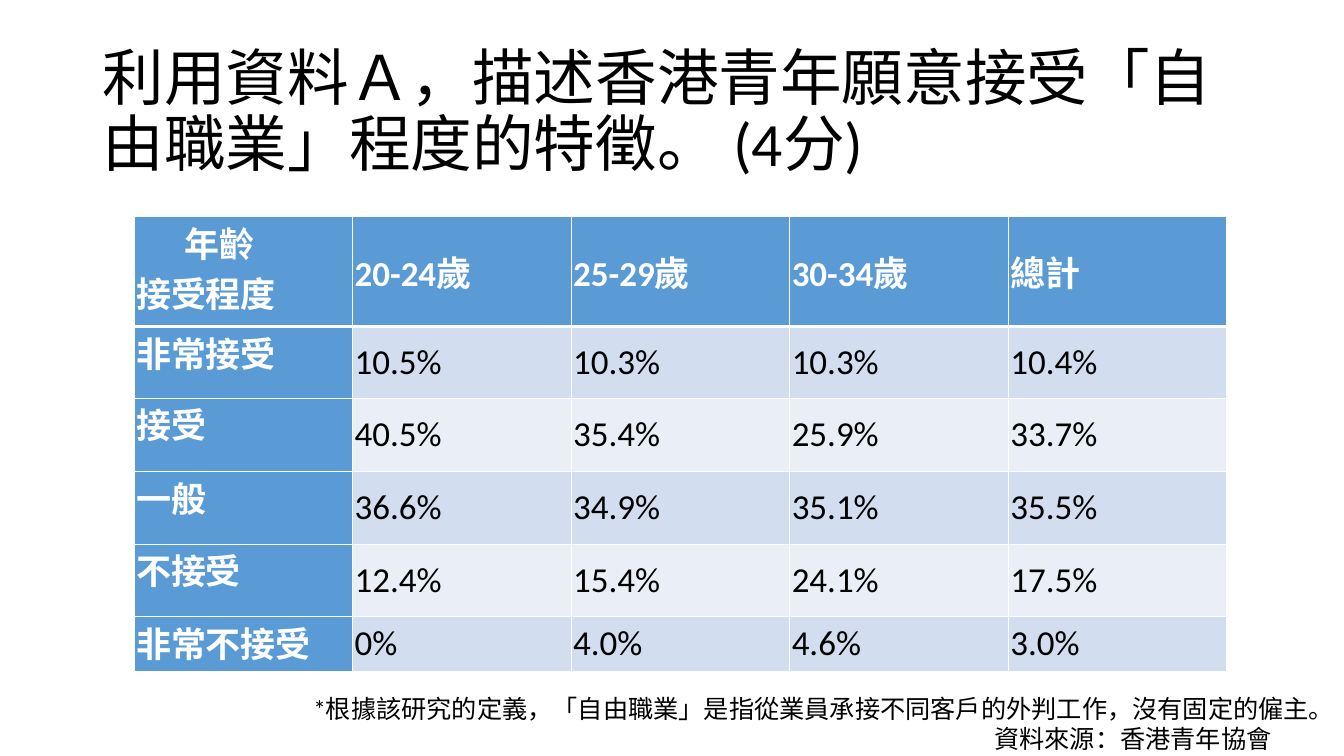
import pptx
import pptx.dml.color
import pptx.enum.text
import pptx.oxml
import pptx.oxml.ns
import pptx.util

Inches = pptx.util.Inches
Pt = pptx.util.Pt
ANCHOR = pptx.enum.text.MSO_ANCHOR
ALIGN = pptx.enum.text.PP_ALIGN

COLORS = {
    "text": "000000",
    "heading": "FFFFFF",
    "border": "FFFFFF",
    "accent": "5B9BD5",
    "odd_row": "D2DEEF",
    "even_row": "EAEFF7",
}

QUESTION = "利用資料Ａ，描述香港青年願意接受「自由職業」程度的特徵。 (4分)"
AGE_LABEL, LEVEL_LABEL = "年齡", "接受程度"
ACCEPTANCE = [
    [f"{AGE_LABEL}\n{LEVEL_LABEL}", "20-24歲", "25-29歲", "30-34歲", "總計"],
    ["非常接受", "10.5%", "10.3%", "10.3%", "10.4%"],
    ["接受", "40.5%", "35.4%", "25.9%", "33.7%"],
    ["一般", "36.6%", "34.9%", "35.1%", "35.5%"],
    ["不接受", "12.4%", "15.4%", "24.1%", "17.5%"],
    ["非常不接受", "0%", "4.0%", "4.6%", "3.0%"],
]
ROW_HEIGHTS = [1.09, 0.71, 0.73, 0.72, 0.72, 0.54]
DEFINITION = "*根據該研究的定義，「自由職業」是指從業員承接不同客戶的外判工作，沒有固定的僱主。"
SOURCE = "資料來源：香港青年協會"


def apply_formats(target, formats):
    for name, value in formats.items():
        setattr(target, name, value)


def style_text(frame, size, color, bold=False, **paragraph_formats):
    for paragraph in frame.paragraphs:
        apply_formats(paragraph, paragraph_formats)
        for run in paragraph.runs:
            apply_formats(run.font, {"name": "Calibri", "size": Pt(size), "bold": bold})
            run.font.color.rgb = pptx.dml.color.RGBColor.from_string(COLORS[color])


def add_words(slide, box, words, size, anchor=ANCHOR.TOP, **paragraph_formats):
    frame = slide.shapes.add_textbox(*map(Inches, box)).text_frame
    apply_formats(frame, {"word_wrap": True, "vertical_anchor": anchor, "text": words})
    style_text(frame, size, "text", **paragraph_formats)


def set_borders(cell, widths):
    properties = cell._tc.get_or_add_tcPr()
    for position, (side, width) in enumerate(widths.items()):
        properties.insert(position, pptx.oxml.parse_xml(
            f'<a:ln{side} {pptx.oxml.ns.nsdecls("a")} w="{Pt(width)}"><a:solidFill>'
            f'<a:srgbClr val="{COLORS["border"]}"/></a:solidFill></a:ln{side}>'))


def add_acceptance_table(slide, box):
    left, top, width, height = map(Inches, box)
    column_count = len(ACCEPTANCE[0])
    table = slide.shapes.add_table(
        len(ACCEPTANCE), column_count, left, top, width, height).table
    for column in table.columns:
        column.width = width // column_count
    for row_index, (levels, row_height) in enumerate(zip(ACCEPTANCE, ROW_HEIGHTS)):
        table.rows[row_index].height = Inches(row_height)
        band = "odd_row" if row_index % 2 else "even_row"
        for column_index, words in enumerate(levels):
            heading = row_index == 0 or column_index == 0
            cell = table.cell(row_index, column_index)
            apply_formats(cell, {
                "text": words,
                "margin_left": Inches(0.02), "margin_right": Inches(0.02),
                "margin_top": 0, "margin_bottom": 0,
                "vertical_anchor": ANCHOR.MIDDLE if column_index else ANCHOR.TOP,
            })
            style_text(cell.text_frame, 25, "heading" if heading else "text", heading)
            cell.fill.solid()
            cell.fill.fore_color.rgb = pptx.dml.color.RGBColor.from_string(
                COLORS["accent" if heading else band])
            set_borders(cell, {"L": 1, "R": 1, "T": 3 if row_index == 1 else 1,
                               "B": 3 if row_index == 0 else 1})
    age_label = table.cell(0, 0).text_frame.paragraphs[0]
    age_label._p.get_or_add_pPr().set("marL", str(Inches(0.48)))


def add_footnotes(slide, box):
    left, top, width, height = box
    line_height, source_indent = 0.3, 0.62
    add_words(slide, (left, top, width, height - line_height), DEFINITION, 18,
              alignment=ALIGN.RIGHT)
    add_words(slide, (left, top + line_height, width - source_indent, height - line_height),
              SOURCE, 18, alignment=ALIGN.RIGHT)


def main():
    deck = pptx.Presentation()
    apply_formats(deck, {"slide_width": Inches(13.33), "slide_height": Inches(7.5)})
    slide = deck.slides.add_slide(deck.slide_layouts[6])
    add_words(slide, (0.92, 0.4, 11.5, 1.45), QUESTION, 44, ANCHOR.MIDDLE, line_spacing=0.9)
    add_acceptance_table(slide, (1.33, 2.15, 10.84, 4.51))
    add_footnotes(slide, (2.36, 6.83, 10.97, 0.71))
    deck.save("out.pptx")


if __name__ == "__main__":
    main()
